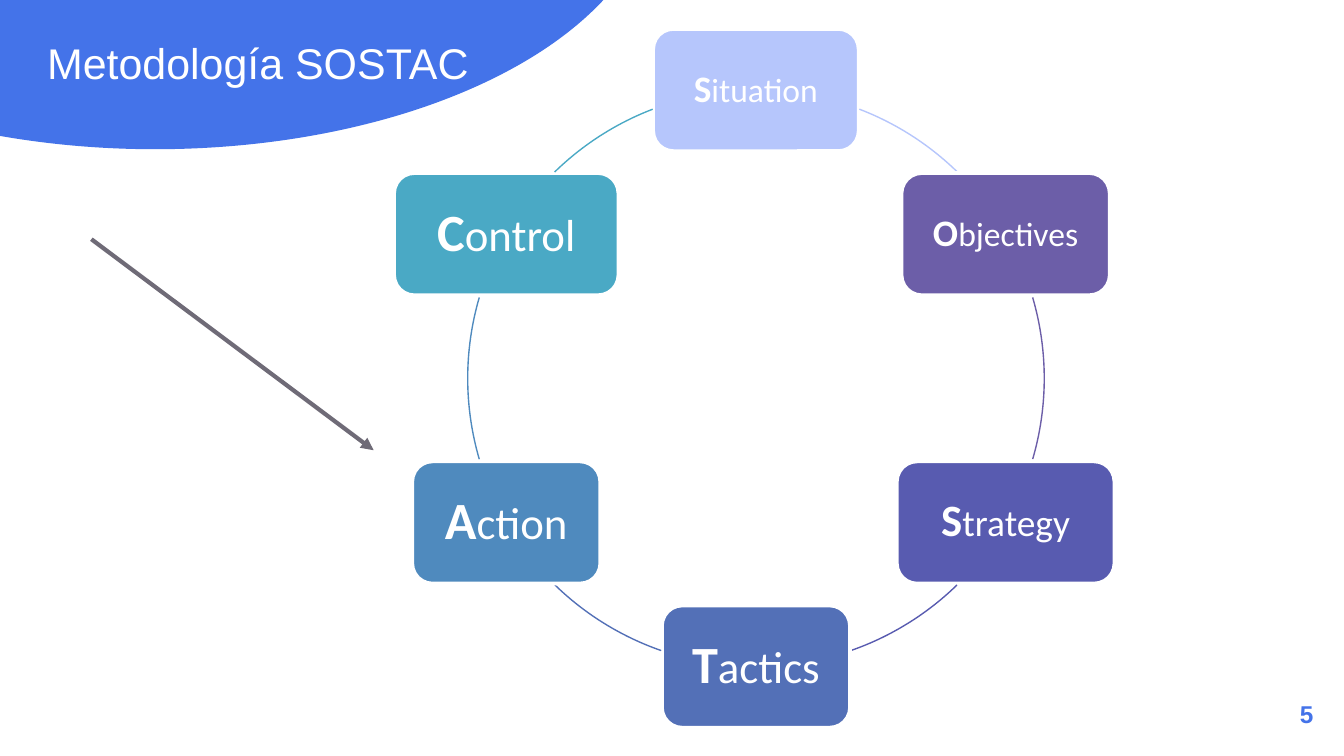
"""Builds the SOSTAC cycle slide on a square grid of 100 columns by 56.25 rows."""
from dataclasses import dataclass
from math import cos, radians, sin

from lxml import etree
from pptx import Presentation
from pptx.dml.color import RGBColor
from pptx.enum.dml import MSO_LINE
from pptx.enum.shapes import MSO_CONNECTOR, MSO_SHAPE
from pptx.enum.text import MSO_ANCHOR, MSO_AUTO_SIZE, PP_ALIGN
from pptx.oxml.ns import qn
from pptx.util import Inches, Pt

ARC, ELLIPSE, ROUNDED = MSO_SHAPE.ARC, MSO_SHAPE.OVAL, MSO_SHAPE.ROUNDED_RECTANGLE
LEFT, CENTER, RIGHT = PP_ALIGN.LEFT, PP_ALIGN.CENTER, PP_ALIGN.RIGHT
MIDDLE, NO_FIT, SOLID = MSO_ANCHOR.MIDDLE, MSO_AUTO_SIZE.NONE, MSO_LINE.SOLID
STRAIGHT = MSO_CONNECTOR.STRAIGHT

COLUMNS, ROWS = 100, 56.25
RING_X, RING_Y, RING_RADIUS = 56.25, 28.15, 21.45
STAGE_HEIGHT = 9.1
BLUE, WHITE, GREY = "4473E9", "FFFFFF", "6F6B77"


@dataclass(frozen=True)
class Stage:
    """One stage of the cycle and the arc, in degrees from the top, that leaves it."""
    word: str
    width: float
    initial_size: int
    rest_size: int
    color: str
    arc_start: float
    arc_end: float


STAGES = [
    Stage("Situation", 15.3, 20, 18, "B6C6FC", 21, 44.3),
    Stage("Objectives", 15.5, 20, 18, "6C5EA8", 73.7, 106.3),
    Stage("Strategy", 16.2, 24, 20, "585BB0", 135.8, 160.8),
    Stage("Tactics", 14, 28, 24, "5370B7", 199.2, 224.2),
    Stage("Action", 14, 28, 24, "4F8ABE", 253.7, 286.3),
    Stage("Control", 16.7, 28, 24, "4AA9C5", 315.7, 339),
]


def cells(*counts: float) -> list:
    """Turn counts of grid cells into lengths."""
    return [Inches(count / 10) for count in counts]


def paint(target, color: str) -> None:
    """Give a fill, or the fill of a line, one solid colour."""
    target.solid()
    target.fore_color.rgb = RGBColor.from_string(color)


def add_span(para, text: str, size: float, color: str, font: str, bold: bool = False) -> None:
    """Append one formatted run to a paragraph."""
    span = para.add_run()
    span.text = text
    span.font.size, span.font.name, span.font.bold = Pt(size), font, bold
    span.font.color.rgb = RGBColor.from_string(color)


def prepare_text(box, align, wrap: bool = True):
    """Set the text frame of a box and return its first paragraph."""
    frame = box.text_frame
    frame.word_wrap, frame.auto_size, frame.vertical_anchor = wrap, NO_FIT, MIDDLE
    frame.margin_left, frame.margin_top, frame.margin_right, frame.margin_bottom = cells(1, 1, 1, 1)
    para = frame.paragraphs[0]
    para.alignment = align
    return para


def add_stage(page, stage: Stage, angle: float) -> None:
    """Draw a stage box on the ring at an angle from the top."""
    center_x = RING_X + RING_RADIUS * sin(radians(angle))
    center_y = RING_Y - RING_RADIUS * cos(radians(angle))
    box = page.shapes.add_shape(ROUNDED, *cells(
        center_x - stage.width / 2, center_y - STAGE_HEIGHT / 2, stage.width, STAGE_HEIGHT))
    box.shadow.inherit = False
    paint(box.fill, stage.color)
    paint(box.line.fill, WHITE)
    box.line.width = Pt(2)
    para = prepare_text(box, CENTER, wrap=False)
    para.line_spacing = 0.9
    add_span(para, stage.word[0], stage.initial_size, WHITE, "Calibri", bold=True)
    add_span(para, stage.word[1:], stage.rest_size, WHITE, "Calibri")


def add_arc(page, stage: Stage) -> None:
    """Draw the piece of ring that follows a stage."""
    arc = page.shapes.add_shape(ARC, *cells(
        RING_X - RING_RADIUS, RING_Y - RING_RADIUS, 2 * RING_RADIUS, 2 * RING_RADIUS))
    arc.shadow.inherit = False
    for index, angle in enumerate((stage.arc_start, stage.arc_end)):
        arc.adjustments[index] = (angle - 90) % 360 * 0.6
    arc.fill.background()
    paint(arc.line.fill, stage.color)
    arc.line.width = Pt(0.75)


def add_arrow(page, start: tuple, end: tuple, color: str) -> None:
    """Draw a straight arrow between two grid points."""
    arrow = page.shapes.add_connector(STRAIGHT, *cells(*start, *end))
    paint(arrow.line.fill, color)
    arrow.line.width, arrow.line.dash_style = Pt(2.25), SOLID
    properties = arrow.element.spPr
    etree.SubElement(properties.find(qn("a:ln")), qn("a:tailEnd"), type="triangle")
    etree.SubElement(properties, qn("a:effectLst"))


def add_heading(page, text: str) -> None:
    """Fill the title placeholder and put the blue ellipse behind it."""
    title = page.shapes.title
    title.left, title.top, title.width, title.height = cells(2.5, 1.3, 34.5, 6.7)
    add_span(prepare_text(title, LEFT), text, 23, WHITE, "Arial")
    ellipse = page.shapes.add_shape(ELLIPSE, *cells(-25.8, -29.3, 74.7, 40.4))
    ellipse.shadow.inherit = False
    paint(ellipse.fill, BLUE)
    ellipse.line.fill.background()
    title.element.addprevious(ellipse.element)


def main() -> None:
    """Build and save the slide."""
    deck = Presentation()
    deck.slide_width, deck.slide_height = cells(COLUMNS, ROWS)
    page = deck.slides.add_slide(deck.slide_layouts[5])
    add_heading(page, "Metodología SOSTAC")
    for index, stage in enumerate(STAGES):
        add_stage(page, stage, index * 360 / len(STAGES))
        add_arc(page, stage)
    number = page.shapes.add_textbox(*cells(92.7, 51, 6, 4.3))
    add_span(prepare_text(number, RIGHT), "5", 13, BLUE, "Arial", bold=True)
    add_arrow(page, (6.8, 17.8), (27.8, 33.5), GREY)
    deck.save("out.pptx")


if __name__ == "__main__":
    main()
